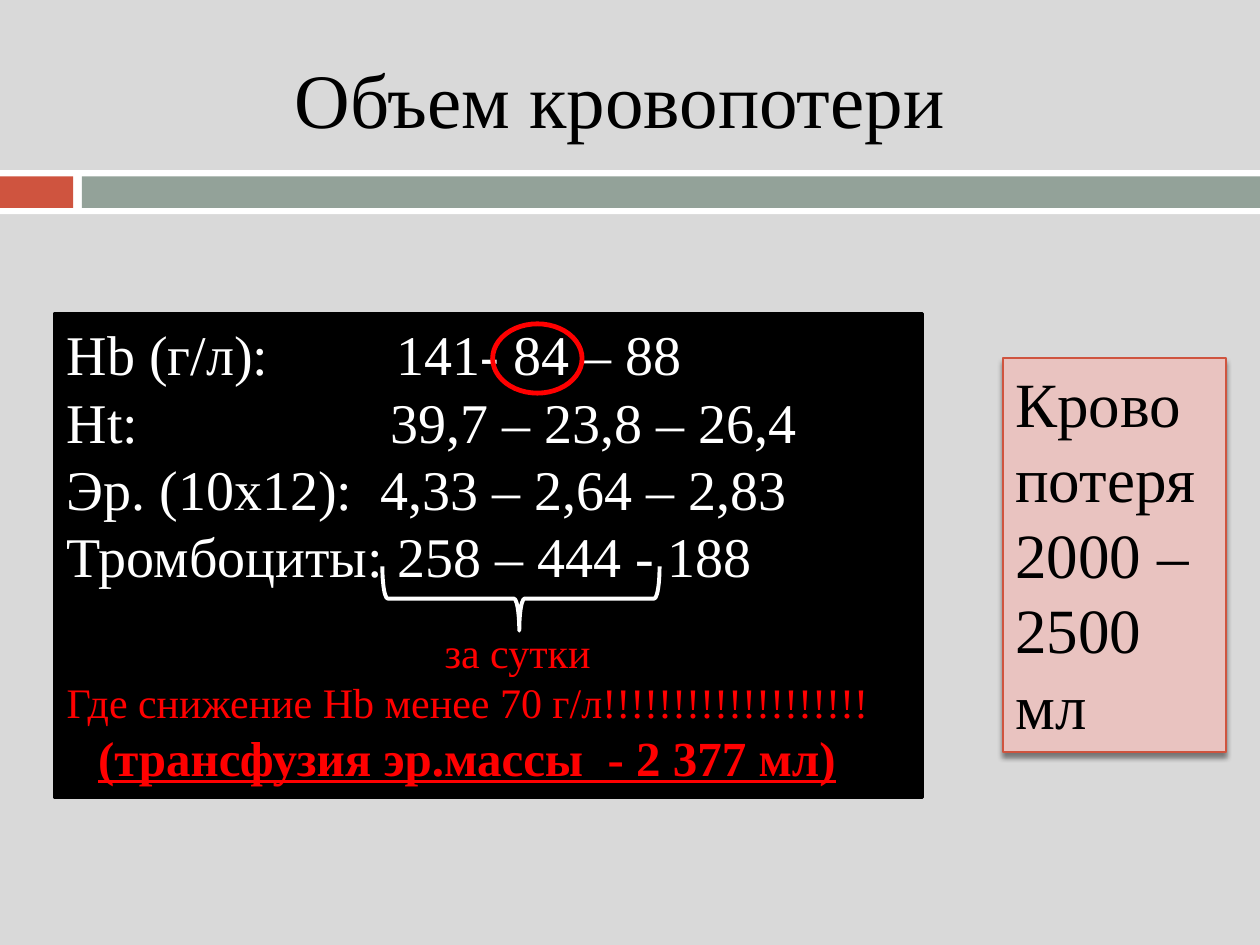
from lxml import etree
from pptx import Presentation
from pptx.dml.color import RGBColor
from pptx.enum.shapes import MSO_SHAPE as Kind
from pptx.enum.text import MSO_ANCHOR as Anchor, PP_ALIGN as Align
from pptx.oxml import parse_xml
from pptx.oxml.ns import nsdecls, qn
from pptx.util import Inches, Pt

FONT = "Times New Roman"
BLACK, WHITE, RED, RUST = "000000", "FFFFFF", "FF0000", "CF543F"


def color(hex_text):
    return RGBColor.from_string(hex_text)


def paint(fmt, hex_text):
    fmt.solid()
    fmt.fore_color.rgb = color(hex_text)


def draw(slide, kind, box, fill=None, line=None, width=1):
    shape = slide.shapes.add_shape(kind, *map(Inches, box))
    shape.shadow.inherit = False
    if fill:
        paint(shape.fill, fill)
    else:
        shape.fill.background()
    if line:
        paint(shape.line.fill, line)
        shape.line.width = Pt(width)
    else:
        shape.line.fill.background()
    return shape


def write(frame, rows):
    """Each row is text, size, colour, paragraph format, font format."""
    frame.word_wrap = True
    frame.vertical_anchor = Anchor.TOP
    for i, (text, size, ink, layout, style) in enumerate(rows):
        para = frame.add_paragraph() if i else frame.paragraphs[0]
        for name, value in ({"alignment": Align.LEFT} | layout).items():
            setattr(para, name, value)
        run = para.add_run()
        run.text = text
        run.font.color.rgb = color(ink)
        look = {"name": FONT, "size": Pt(size)} | style
        for name, value in look.items():
            setattr(run.font, name, value)
    return frame.paragraphs


def indent(para, left):
    para._p.get_or_add_pPr().set("marL", str(Inches(left)))


def set_tab(para, pos):
    tabs = etree.SubElement(para._p.get_or_add_pPr(), qn("a:tabLst"))
    etree.SubElement(tabs, qn("a:tab"), pos=str(Inches(pos)), algn="l")


def add_shade(shape):
    effects = shape._element.spPr.find(qn("a:effectLst"))
    effects.append(parse_xml(
        f'<a:outerShdw {nsdecls("a")} blurRad="{Pt(3)}" dist="{Pt(2.4)}" '
        'dir="5400000" rotWithShape="0"><a:srgbClr val="000000">'
        '<a:alpha val="45000"/></a:srgbClr></a:outerShdw>'))


def add_band(slide, x, y, w, h):
    gap, mark = 0.05, 0.58
    start = mark + 0.07
    draw(slide, Kind.RECTANGLE, (x, y, w, h), WHITE)
    for left, wide, fill in ((0, mark, RUST), (start, w - start, "93A299")):
        box = (x + left, y + gap, wide, h - 2 * gap)
        draw(slide, Kind.RECTANGLE, box, fill)


def add_title(slide, *box):
    area = slide.shapes.add_textbox(*map(Inches, box))
    write(area.text_frame, [
        ("Объем кровопотери", 44, BLACK, {"alignment": Align.CENTER}, {})])


def add_tests(slide, x, y, w, h):
    panel = draw(slide, Kind.RECTANGLE, (x, y, w, h), BLACK, BLACK, 1.5)
    tests = (
        ("Hb (г/л):\t141- 84 – 88", 2.62),
        ("Ht:\t39,7 – 23,8 – 26,4", 2.57),
        ("Эр. (10х12):\t4,33 – 2,64 – 2,83", 2.49),
        ("Тромбоциты: 258 – 444 - 188", None),
    )
    notes = [
        ("за сутки", 24, RED, {"space_before": Pt(21.5)}, {}),
        ("Где снижение Hb менее 70 г/л!!!!!!!!!!!!!!!!!!!", 24, RED, {}, {}),
        ("(трансфузия эр.массы  - 2 377 мл)", 28, RED, {},
         {"bold": True, "underline": True}),
    ]
    rows = [(text, 32, WHITE, {}, {}) for text, _ in tests]
    paras = write(panel.text_frame, rows + notes)
    for para, (_, stop) in zip(paras, tests):
        if stop:
            set_tab(para, stop)
    indent(paras[4], 3)
    indent(paras[6], 0.25)

    brace = draw(slide, Kind.LEFT_BRACE, (x + 3.45, y + 1.16, 0.51, 2.2),
                 line=WHITE, width=2.25)
    brace.rotation = 270
    brace.adjustments[0], brace.adjustments[1] = 0.083, 0.494
    draw(slide, Kind.OVAL, (x + 3.48, y + 0.08, 0.71, 0.55),
         line=RED, width=2.75)


def add_loss(slide, *box):
    card = draw(slide, Kind.RECTANGLE, box, "E9C3C0", RUST, 0.79)
    add_shade(card)
    write(card.text_frame, [(text, 36, BLACK, {}, {})
                            for text in ("Крово", "потеря 2000 – 2500 мл")])


def main():
    deck = Presentation()
    deck.slide_width, deck.slide_height = Inches(10), Inches(7.5)
    slide = deck.slides.add_slide(deck.slide_layouts[6])
    paint(slide.background.fill, "D9D9D9")
    add_band(slide, 0, 1.35, 10, 0.35)
    add_title(slide, 0.59, 0.36, 8.66, 0.84)
    add_tests(slide, 0.43, 2.49, 6.89, 3.84)
    add_loss(slide, 7.96, 2.84, 1.77, 3.13)
    deck.save("out.pptx")


if __name__ == "__main__":
    main()
